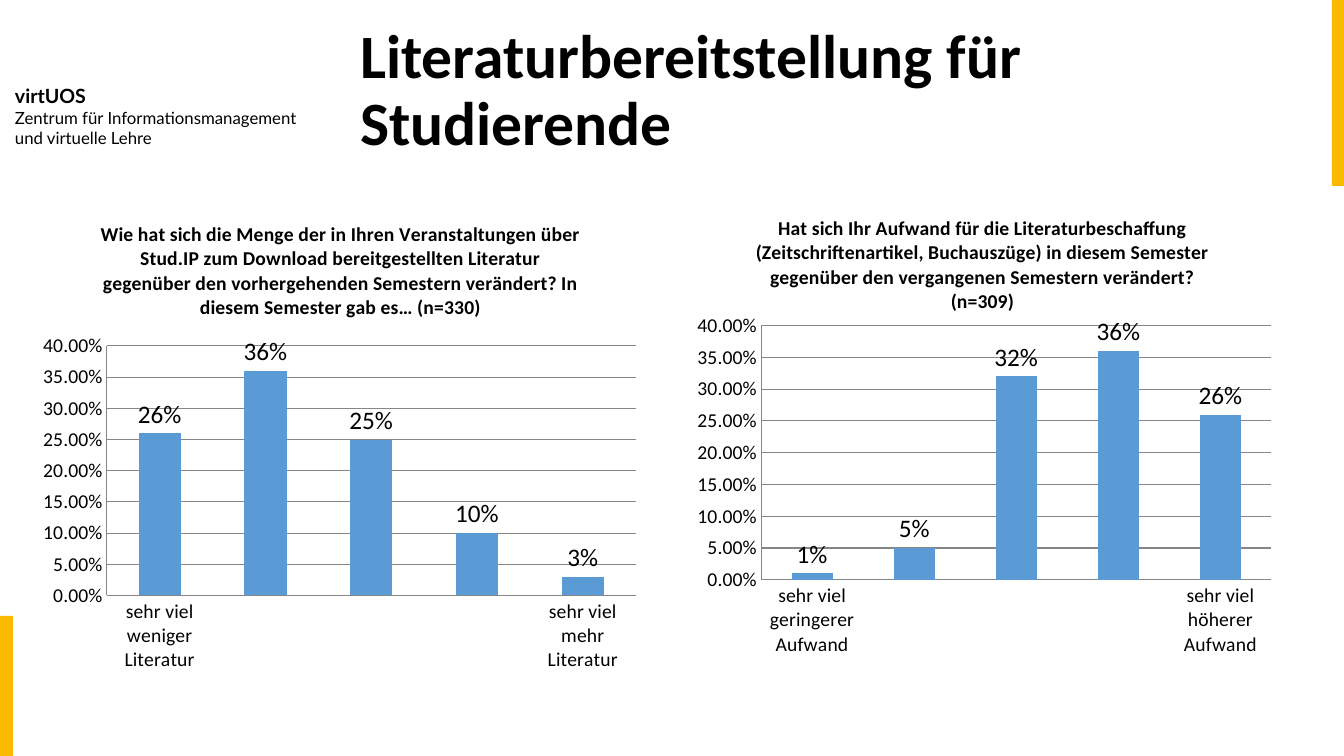
"""Builds a slide with two column charts on literature provision for students."""
from dataclasses import dataclass

from lxml import etree
from pptx import Presentation
from pptx import util as u
from pptx.chart import data as chart_data
from pptx.dml.color import RGBColor
from pptx.enum import chart as ec, shapes, text
from pptx.oxml.ns import qn

EMU_PER_PX = 914400 / 100.8
BLACK, ACCENT, COLUMN, RULE = "000000", "FBB900", "5B9BD5", "868686"


@dataclass
class Bar:
    box: tuple[int, int, int, int]


@dataclass
class SenderLine:
    words: str
    size: int
    bold: bool


@dataclass
class Survey:
    question: str
    lowest: str
    highest: str
    shares: tuple[float, ...]
    box: tuple[int, int, int, int]
    plot: tuple[float, float, float, float]


BARS = [Bar((1332, -1, 14, 187)), Bar((-1, 616, 14, 140))]
SENDER = [
    SenderLine("virtUOS", 14, True),
    SenderLine("Zentrum für Informationsmanagement", 12, False),
    SenderLine("und virtuelle Lehre", 12, False),
]
SURVEYS = [
    Survey(
        "Wie hat sich die Menge der in Ihren Veranstaltungen über Stud.IP zum "
        "Download bereitgestellten Literatur gegenüber den vorhergehenden "
        "Semestern verändert? In diesem Semester gab es… (n=330)",
        "sehr viel weniger Literatur", "sehr viel mehr Literatur",
        (0.26, 0.36, 0.25, 0.10, 0.03), (33, 202, 615, 480), (0.12, 0.3, 0.86, 0.52)),
    Survey(
        "Hat sich Ihr Aufwand für die Literaturbeschaffung (Zeitschriftenartikel, "
        "Buchauszüge) in diesem Semester gegenüber den vergangenen Semestern "
        "verändert? (n=309)",
        "sehr viel geringerer Aufwand", "sehr viel höherer Aufwand",
        (0.01, 0.05, 0.32, 0.36, 0.26), (675, 196, 615, 480), (0.14, 0.27, 0.83, 0.53)),
]


def px(*lengths: int) -> list[u.Emu]:
    """Turn pixel lengths into EMU."""
    return [u.Emu(round(length * EMU_PER_PX)) for length in lengths]


def rgb(hex_code: str) -> RGBColor:
    """Turn a hex string into a colour."""
    return RGBColor.from_string(hex_code)


def apply(target, **values) -> None:
    """Set several attributes on one object."""
    for name, value in values.items():
        setattr(target, name, value)


def style(font, size: int, bold: bool = False, name: str = "Calibri") -> None:
    """Format a font in black."""
    apply(font, size=u.Pt(size), bold=bold, name=name)
    font.color.rgb = rgb(BLACK)


def draw_bar(slide, bar: Bar) -> None:
    """Draw an accent bar at the slide edge."""
    edge = slide.shapes.add_shape(shapes.MSO_SHAPE.RECTANGLE, *px(*bar.box))
    edge.shadow.inherit = False
    edge.fill.solid()
    edge.fill.fore_color.rgb = rgb(ACCENT)
    edge.line.fill.background()


def draw_sender(slide, lines: list[SenderLine]) -> None:
    """Write the sender block, one paragraph per line."""
    frame = slide.shapes.add_textbox(*px(5, 79, 345, 75)).text_frame
    apply(frame, word_wrap=True, auto_size=text.MSO_AUTO_SIZE.SHAPE_TO_FIT_TEXT)
    frame.text = "\n".join(line.words for line in lines)
    for paragraph, line in zip(frame.paragraphs, lines):
        style(paragraph.runs[0].font, line.size, line.bold, "Lato")


def draw_title(slide, words: str) -> None:
    """Place and format the title placeholder."""
    title = slide.shapes.title
    apply(title, **dict(zip(("left", "top", "width", "height"), px(350, 19, 948, 146))))
    frame = title.text_frame
    frame.text = words
    apply(frame, word_wrap=True, vertical_anchor=text.MSO_ANCHOR.MIDDLE,
          auto_size=text.MSO_AUTO_SIZE.NONE)
    apply(frame.paragraphs[0], alignment=text.PP_ALIGN.LEFT, line_spacing=0.9)
    style(frame.paragraphs[0].runs[0].font, 44, True)


def place_plot(chart, plot: tuple[float, float, float, float]) -> None:
    """Fix the inner plot area as fractions of the chart."""
    area = chart.element.find(".//" + qn("c:plotArea"))
    for old in area.findall(qn("c:layout")):
        area.remove(old)
    layout = etree.Element(qn("c:layout"))
    area.insert(0, layout)
    manual = etree.SubElement(layout, qn("c:manualLayout"))
    settings = [("layoutTarget", "inner"), ("xMode", "edge"), ("yMode", "edge"),
                *zip("xywh", plot)]
    for tag, value in settings:
        etree.SubElement(manual, qn(f"c:{tag}")).set("val", str(value))


def draw_survey(slide, survey: Survey) -> None:
    """Draw one survey question as a column chart."""
    answers = chart_data.CategoryChartData(number_format="0%")
    answers.categories = [survey.lowest, "", "", "", survey.highest]
    answers.add_series("Series 1", survey.shares)
    chart = slide.shapes.add_chart(
        ec.XL_CHART_TYPE.COLUMN_CLUSTERED, *px(*survey.box), answers).chart
    chart.has_legend = False
    style(chart.font, 14, name="Lato")

    question = chart.chart_title.text_frame
    question.text = survey.question
    style(question.paragraphs[0].runs[0].font, 14, True)
    chart.chart_title.include_in_layout = False

    for axis in (chart.category_axis, chart.value_axis):
        apply(axis, major_tick_mark=ec.XL_TICK_MARK.NONE,
              minor_tick_mark=ec.XL_TICK_MARK.NONE)
        style(axis.tick_labels.font, 14)
        axis.format.line.color.rgb = rgb(RULE)
    scale = chart.value_axis
    apply(scale, minimum_scale=0, maximum_scale=0.4, major_unit=0.05,
          has_major_gridlines=True)
    apply(scale.tick_labels, number_format="0.00%", number_format_is_linked=False)
    scale.major_gridlines.format.line.color.rgb = rgb(RULE)

    columns = chart.plots[0]
    apply(columns, gap_width=150, vary_by_categories=False, has_data_labels=True)
    apply(columns.data_labels, show_value=True, number_format="0%",
          number_format_is_linked=False, position=ec.XL_LABEL_POSITION.OUTSIDE_END)
    style(columns.data_labels.font, 18)
    fill = columns.series[0].format.fill
    fill.solid()
    fill.fore_color.rgb = rgb(COLUMN)
    place_plot(chart, survey.plot)


def main() -> None:
    """Build and save the slide."""
    deck = Presentation()
    deck.slide_width, deck.slide_height = px(1344, 756)
    slide = deck.slides.add_slide(deck.slide_layouts[5])
    for bar in BARS:
        draw_bar(slide, bar)
    draw_sender(slide, SENDER)
    draw_title(slide, "Literaturbereitstellung für Studierende")
    for survey in SURVEYS:
        draw_survey(slide, survey)
    deck.save("out.pptx")


if __name__ == "__main__":
    main()
